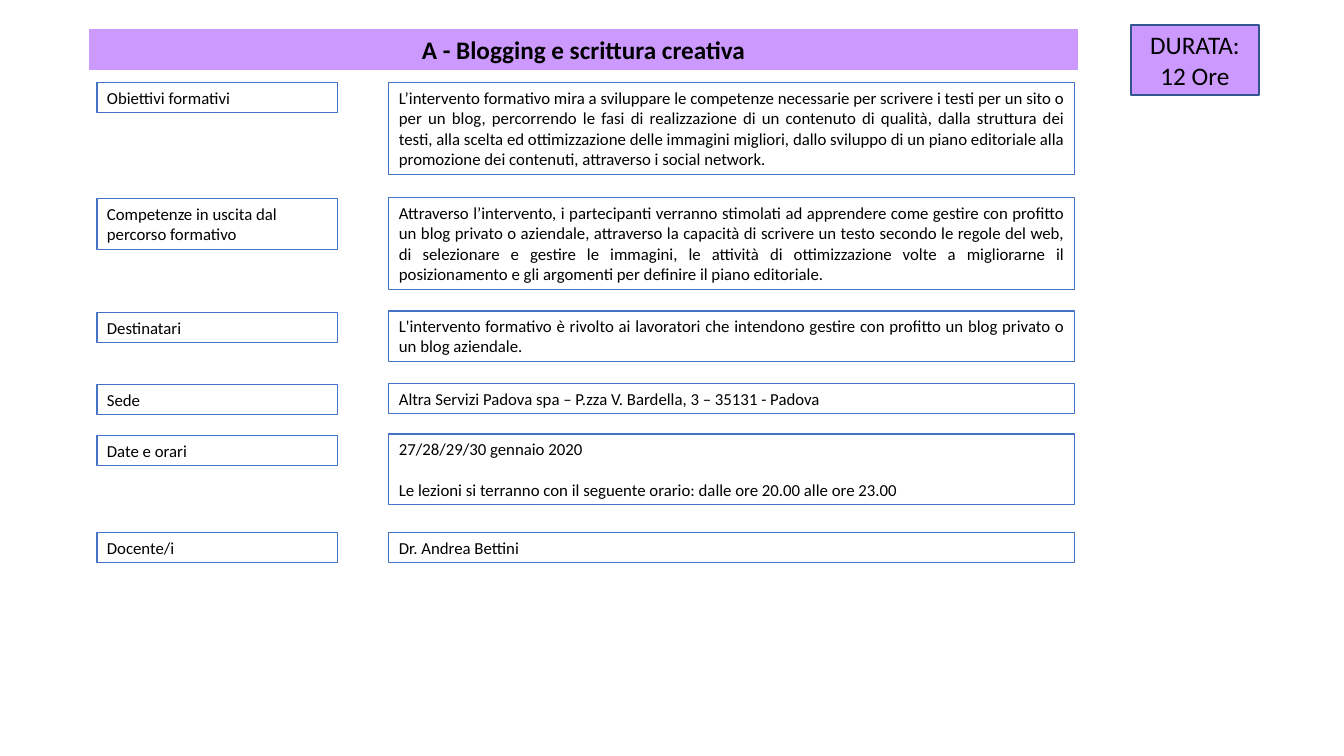
from dataclasses import dataclass

from pptx import Presentation
from pptx.dml.color import RGBColor
from pptx.enum.shapes import MSO_SHAPE
from pptx.enum.text import MSO_ANCHOR, MSO_AUTO_SIZE, PP_ALIGN
from pptx.util import Emu, Pt

RECTANGLE = MSO_SHAPE.RECTANGLE
LEFT, CENTER, JUSTIFY = PP_ALIGN.LEFT, PP_ALIGN.CENTER, PP_ALIGN.JUSTIFY
TOP, MIDDLE = MSO_ANCHOR.TOP, MSO_ANCHOR.MIDDLE
FIT_SHAPE, FIXED = MSO_AUTO_SIZE.SHAPE_TO_FIT_TEXT, MSO_AUTO_SIZE.NONE

# Content
TITLE = "A - Blogging e scrittura creativa"
DURATION = ["DURATA:", "12 Ore"]

# Label, label top, label lines, detail paragraphs, detail top, detail lines, alignment
ROWS = [
    ("Obiettivi formativi", 83, 1, [
        "L’intervento formativo mira a sviluppare le competenze necessarie per "
        "scrivere i testi per un sito o per un blog, percorrendo le fasi di "
        "realizzazione di un contenuto di qualità, dalla struttura dei testi, alla "
        "scelta ed ottimizzazione delle immagini migliori, dallo sviluppo di un piano "
        "editoriale alla promozione dei contenuti, attraverso i social network."],
     83, 4, JUSTIFY),
    ("Competenze in uscita dal percorso formativo", 199, 2, [
        "Attraverso l’intervento, i partecipanti verranno stimolati ad apprendere come "
        "gestire con profitto un blog privato o aziendale, attraverso la capacità di "
        "scrivere un testo secondo le regole del web, di selezionare e gestire le "
        "immagini, le attività di ottimizzazione volte a migliorarne il posizionamento "
        "e gli argomenti per definire il piano editoriale."],
     198, 4, JUSTIFY),
    ("Destinatari", 313, 1, [
        "L'intervento formativo è rivolto ai lavoratori che intendono gestire con "
        "profitto un blog privato o un blog aziendale."],
     311, 2, JUSTIFY),
    ("Sede", 385, 1, [
        "Altra Servizi Padova spa – P.zza V. Bardella, 3 – 35131 - Padova"],
     384, 1, LEFT),
    ("Date e orari", 436, 1, [
        "27/28/29/30 gennaio 2020",
        "Le lezioni si terranno con il seguente orario: dalle ore 20.00 alle ore 23.00"],
     434, 3, LEFT),
    ("Docente/i", 533, 1, ["Dr. Andrea Bettini"], 533, 1, LEFT),
]


@dataclass(frozen=True)
class Theme:
    font: str = "Calibri"
    ink: str = "000000"
    accent: str = "CC99FF"
    border: str = "4472C4"
    badge_border: str = "325491"
    heading: int = 18
    body: int = 12
    paragraph_gap: float = 14.4


THEME = Theme()

# Geometry in px
SCALE = 914400 / 100.8
PAGE_WIDTH, PAGE_HEIGHT = 1344, 756
TITLE_AREA = (89, 29, 989, 41)
BADGE_AREA = (1131, 25, 128, 70)
LABEL_LEFT, LABEL_WIDTH = 97, 241
DETAIL_LEFT, DETAIL_WIDTH = 389, 686
BOX_PADDING, LINE_HEIGHT = 10, 20.4


def px(length):
    return Emu(round(length * SCALE))


def place(box, area):
    box.left, box.top, box.width, box.height = map(px, area)


def row_area(left, top, width, lines):
    return left, top, width, round(BOX_PADDING + LINE_HEIGHT * lines)


def write(box, paragraphs, size=THEME.body, bold=False, align=LEFT,
          anchor=TOP, fit=FIT_SHAPE, gap=0):
    frame = box.text_frame
    frame.word_wrap = True
    frame.auto_size = fit
    frame.vertical_anchor = anchor
    for index, text in enumerate(paragraphs):
        para = frame.add_paragraph() if index else frame.paragraphs[0]
        para.alignment = align
        para.space_before = Pt(gap if index else 0)
        span = para.add_run()
        span.text = text
        span.font.name = THEME.font
        span.font.size = Pt(size)
        span.font.bold = bold
        span.font.color.rgb = RGBColor.from_string(THEME.ink)


def add_box(page, area, paragraphs, fill=None, border=THEME.border,
            border_width=0.75, **text_format):
    box = page.shapes.add_shape(RECTANGLE, *map(px, area))
    box.shadow.inherit = False
    if fill:
        box.fill.solid()
        box.fill.fore_color.rgb = RGBColor.from_string(fill)
    else:
        box.fill.background()
    box.line.color.rgb = RGBColor.from_string(border)
    box.line.width = Pt(border_width)
    write(box, paragraphs, **text_format)


def main():
    deck = Presentation()
    deck.slide_width, deck.slide_height = px(PAGE_WIDTH), px(PAGE_HEIGHT)
    page = deck.slides.add_slide(deck.slide_layouts.get_by_name("Title Only"))

    # Title band keeps its set height
    title = page.shapes.title
    place(title, TITLE_AREA)
    title.fill.solid()
    title.fill.fore_color.rgb = RGBColor.from_string(THEME.accent)
    write(title, [TITLE], size=THEME.heading, bold=True, align=CENTER, fit=FIXED)

    # Course details
    for label, label_top, label_lines, details, top, lines, align in ROWS:
        add_box(page, row_area(LABEL_LEFT, label_top, LABEL_WIDTH, label_lines), [label])
        add_box(page, row_area(DETAIL_LEFT, top, DETAIL_WIDTH, lines), details,
                align=align, gap=THEME.paragraph_gap)

    # Duration badge
    add_box(page, BADGE_AREA, DURATION, fill=THEME.accent, border=THEME.badge_border,
            border_width=1, size=THEME.heading, align=CENTER, anchor=MIDDLE, fit=FIXED)

    deck.save("out.pptx")


if __name__ == "__main__":
    main()
